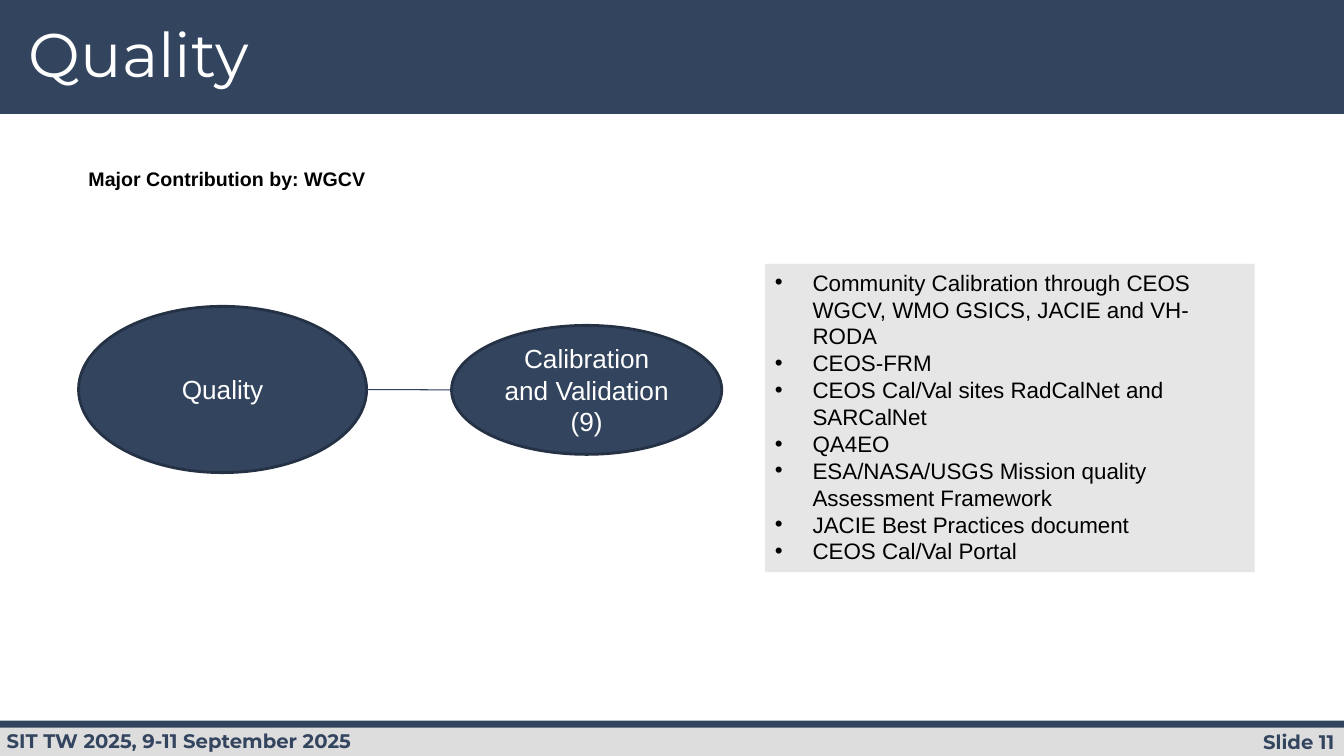
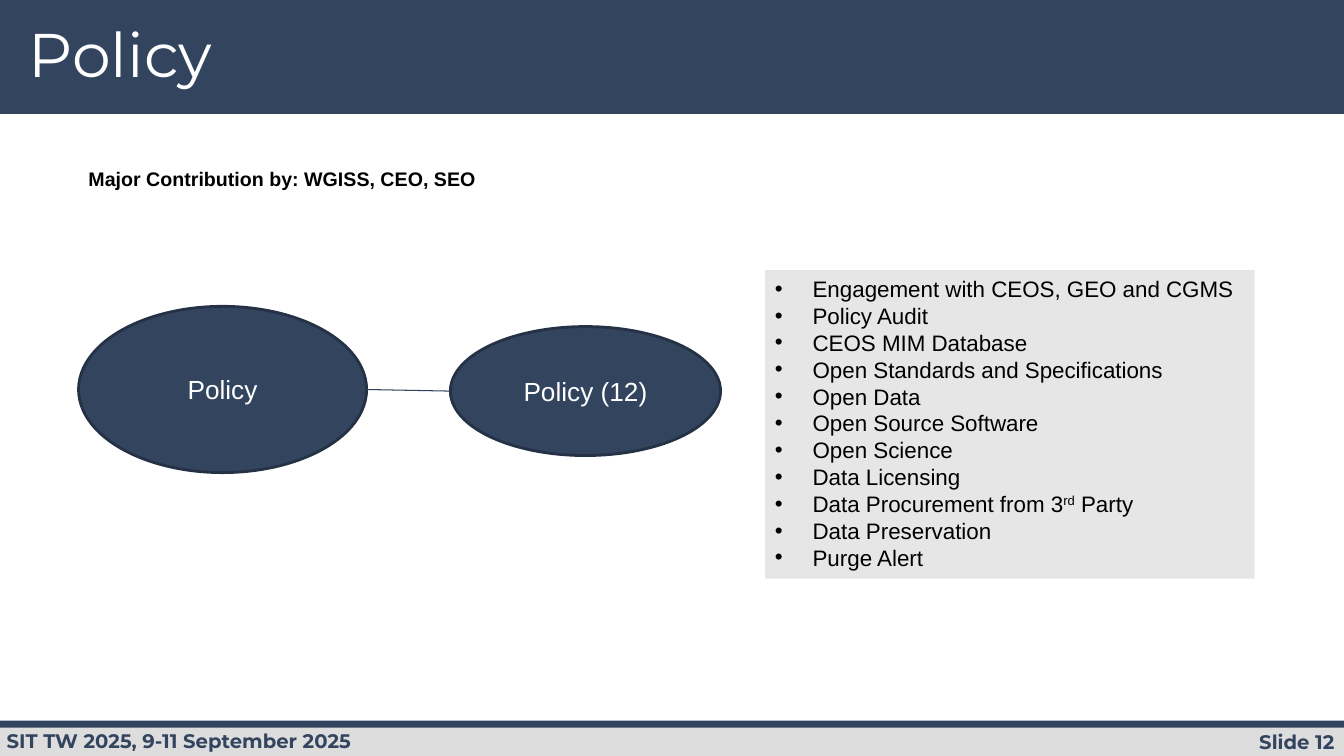
"""Build the Quality and Policy slides, each linking a theme to its topic and a list of activities."""
import pptx
import pptx.dml.color
import pptx.enum.shapes
import pptx.enum.text
import pptx.oxml.ns
import pptx.util
from lxml import etree

Cm = pptx.util.Cm
Pt = pptx.util.Pt
RGBColor = pptx.dml.color.RGBColor
SHAPE = pptx.enum.shapes.MSO_SHAPE
ALIGN = pptx.enum.text.PP_ALIGN
ANCHOR = pptx.enum.text.MSO_ANCHOR
qn = pptx.oxml.ns.qn

NAVY = RGBColor(0x33, 0x44, 0x5F)
OUTLINE = RGBColor(0x25, 0x31, 0x45)
LINK = RGBColor(0x2F, 0x41, 0x5D)
FOOTER_GREY = RGBColor(0xDD, 0xDD, 0xDD)
LIST_GREY = RGBColor(0xE7, 0xE6, 0xE6)
WHITE = RGBColor(0xFF, 0xFF, 0xFF)
BLACK = RGBColor(0x00, 0x00, 0x00)

WIDTH, HEIGHT = 33.87, 19.05
BANDS = [
    ((0, 0, WIDTH, 2.87), NAVY),
    ((0, 18.26, WIDTH, 0.79), FOOTER_GREY),
    ((0, 18.16, WIDTH, 0.18), NAVY),
]
SLIDES = [
    {
        "title": "Quality",
        "contributors": "WGCV",
        "topic": "Calibration and Validation (9)",
        "topic_at": (11.38, 8.2),
        "list_top": 6.65,
        "items": [
            "Community Calibration through CEOS WGCV, WMO GSICS, JACIE and VH-RODA",
            "CEOS-FRM",
            "CEOS Cal/Val sites RadCalNet and SARCalNet",
            "QA4EO",
            "ESA/NASA/USGS Mission quality Assessment Framework",
            "JACIE Best Practices document",
            "CEOS Cal/Val Portal",
        ],
    },
    {
        "title": "Policy",
        "contributors": "WGISS, CEO, SEO",
        "topic": "Policy (12)",
        "topic_at": (11.35, 8.23),
        "list_top": 6.81,
        "items": [
            "Engagement with CEOS, GEO and CGMS",
            "Policy Audit",
            "CEOS MIM Database",
            "Open Standards and Specifications",
            "Open Data",
            "Open Source Software",
            "Open Science",
            "Data Licensing",
            "Data Procurement from 3^rd^ Party",
            "Data Preservation",
            "Purge Alert",
        ],
    },
]


def add_box(page, kind, place, fill=None, line=None):
    """Add a preset shape, or a text box when kind is None, at a place in centimetres."""
    lengths = [Cm(length) for length in place]
    if kind is None:
        box = page.shapes.add_textbox(*lengths)
    else:
        box = page.shapes.add_shape(kind, *lengths)
        box.shadow.inherit = False
        box.fill.solid()
        box.fill.fore_color.rgb = fill
        if line is None:
            box.line.fill.background()
        else:
            box.line.color.rgb = line
            box.line.width = Pt(2)
    box.text_frame.word_wrap = True
    return box


def write(para, text, name, size, color, bold=False, align=ALIGN.LEFT):
    """Fill a paragraph with text, raising the parts between carets."""
    para.alignment = align
    para.font.name = name
    para.font.size = Pt(size)
    para.font.bold = bold
    para.font.color.rgb = color
    for index, part in enumerate(text.split("^")):
        span = para.add_run()
        span.text = part
        if index % 2:
            span.font._element.set("baseline", "30000")


deck = pptx.Presentation()
deck.slide_width = Cm(WIDTH)
deck.slide_height = Cm(HEIGHT)

for number, content in enumerate(SLIDES, start=11):
    page = deck.slides.add_slide(deck.slide_layouts[6])

    for place, color in BANDS:
        add_box(page, SHAPE.RECTANGLE, place, color)

    labels = [
        ((28.52, 18.26, 5.36, 0.86), f"Slide {number}", "Montserrat", 14, NAVY, True, ALIGN.RIGHT),
        ((-0.08, 18.24, 16.33, 0.86), "SIT TW 2025, 9-11 September 2025", "Montserrat", 14, NAVY, True),
        ((0.48, 0.48, 26.09, 2.16), content["title"], "Montserrat", 44, WHITE),
        ((1.98, 4.09, 11, 0.86), f"Major Contribution by: {content['contributors']}", "Arial", 14, BLACK, True),
    ]
    for place, text, *style in labels:
        para = add_box(page, None, place).text_frame.paragraphs[0]
        if text == content["title"]:
            para.line_spacing = 0.9
        write(para, text, *style)

    ovals = []
    for text, place in [
        (content["title"], (1.98, 7.72, 7.26, 4.19)),
        (content["topic"], (*content["topic_at"], 6.81, 3.25)),
    ]:
        oval = add_box(page, SHAPE.OVAL, place, NAVY, OUTLINE)
        oval.text_frame.vertical_anchor = ANCHOR.MIDDLE
        write(oval.text_frame.paragraphs[0], text, "Arial", 18.7, WHITE, align=ALIGN.CENTER)
        ovals.append(oval)

    theme, topic = ovals
    link = page.shapes.add_connector(
        pptx.enum.shapes.MSO_CONNECTOR.STRAIGHT,
        theme.left + theme.width, theme.top + theme.height // 2,
        topic.left, topic.top + topic.height // 2,
    )
    link.line.color.rgb = LINK
    link.line.width = Pt(0.75)
    etree.SubElement(link.element.spPr, qn("a:effectLst"))

    activities = add_box(page, SHAPE.RECTANGLE, (19.28, content["list_top"], 12.34, 7.77), LIST_GREY)
    frame = activities.text_frame
    frame.vertical_anchor = ANCHOR.TOP
    for index, item in enumerate(content["items"]):
        para = frame.add_paragraph() if index else frame.paragraphs[0]
        properties = para._p.get_or_add_pPr()
        properties.set("marL", str(Cm(0.95)))
        properties.set("indent", str(-Cm(0.95)))
        etree.SubElement(properties, qn("a:buFont"), typeface="Arial")
        etree.SubElement(properties, qn("a:buChar"), char="•")
        write(para, item, "Arial", 16, BLACK)

deck.save("out.pptx")
